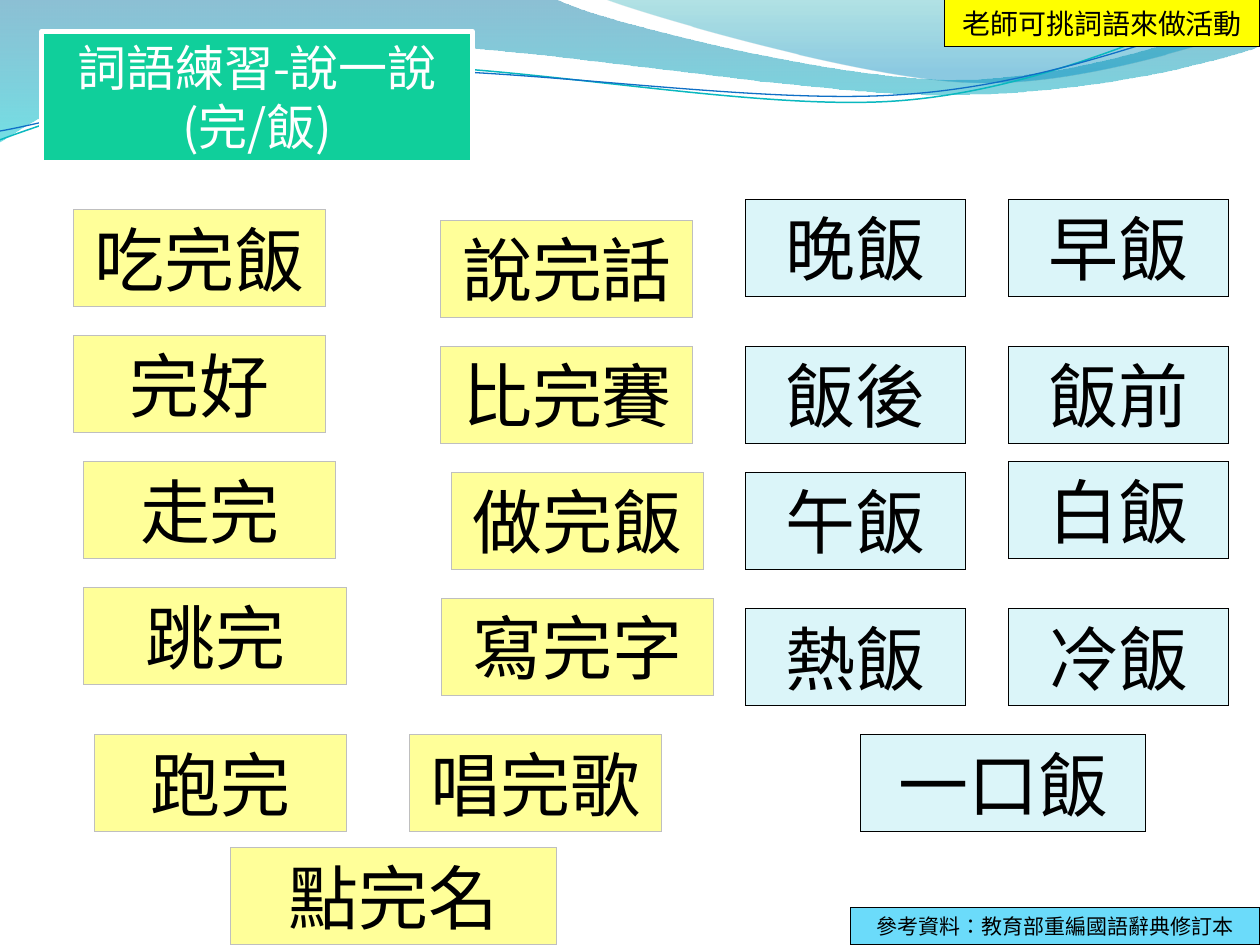
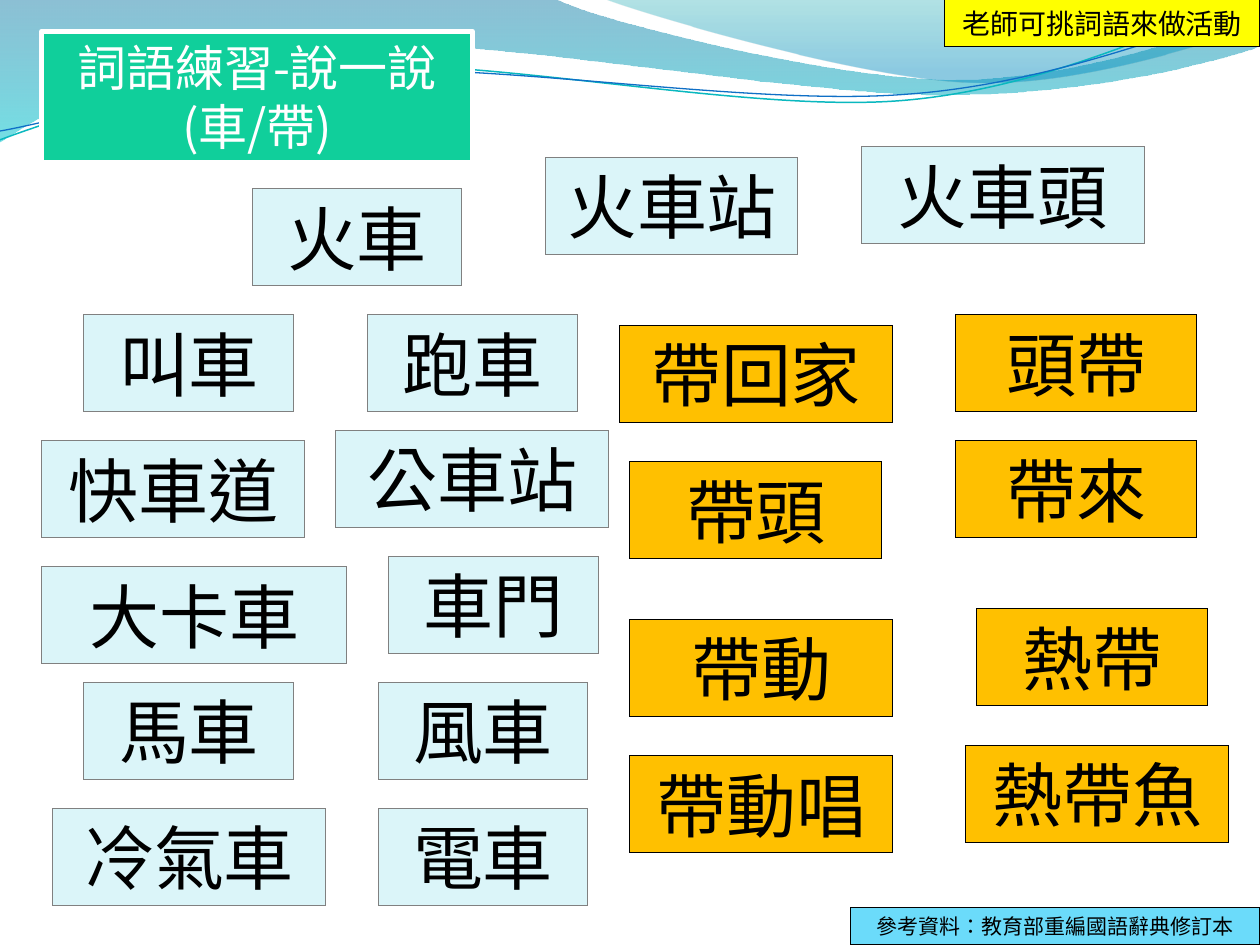
from math import cos, radians, sin
from lxml.etree import SubElement as Sub
from pptx import Presentation
from pptx.dml.color import RGBColor as RGB
from pptx.enum.shapes import MSO_SHAPE as Kind
from pptx.enum.text import MSO_ANCHOR as Anchor, MSO_AUTO_SIZE as Auto, PP_ALIGN as Align
from pptx.oxml.ns import qn
from pptx.util import Inches, Pt

FONT = "Noto Sans CJK SC"
UNIT = 12
TILT = 2.7
HUES = {
    "ink": "000000", "white": "FFFFFF", "green": "10CF9B",
    "yellow": "FFFF00", "sky": "6BDBFA", "cream": "FFFF99", "pale": "DBF5F9",
    "gold": "FFC000", "silver": "BFBFBF", "gray": "808080",
    "deep": "0074A1", "aqua": "00C6CF", "teal": "00A1A9", "blue": "008BBF",
    "cyan": "0AB8BF", "navy": "0F6FC6",
}

TITLE = "詞語練習-說一說"
TIP = "老師可挑詞語來做活動"
CREDIT = "參考資料：教育部重編國語辭典修訂本"

DECK = [
    ("(完/飯)", [
        ("cream", "silver", [
            ("吃完飯", 7, 20, 24), ("完好", 7, 32, 24), ("走完", 8, 44, 24),
            ("跳完", 8, 56, 25), ("跑完", 9, 70, 24),
            ("說完話", 42, 21, 24), ("比完賽", 42, 33, 24), ("做完飯", 43, 45, 24),
            ("寫完字", 42, 57, 26), ("唱完歌", 39, 70, 24), ("點完名", 22, 80.75, 31),
        ]),
        ("pale", "ink", [
            ("晚飯", 71, 19, 21), ("飯後", 71, 33, 21), ("午飯", 71, 45, 21),
            ("熱飯", 71, 58, 21),
            ("早飯", 96, 19, 21), ("飯前", 96, 33, 21), ("白飯", 96, 44, 21),
            ("冷飯", 96, 58, 21), ("一口飯", 82, 70, 27.1),
        ]),
    ]),
    ("(車/帶)", [
        ("pale", "gray", [
            ("火車", 24, 18, 20), ("火車站", 52, 15, 24), ("火車頭", 82, 14, 27),
            ("叫車", 8, 30, 20), ("快車道", 4, 42, 25), ("大卡車", 4, 54, 29),
            ("馬車", 8, 65, 20), ("冷氣車", 5, 77, 26),
            ("跑車", 35, 30, 20), ("公車站", 32, 41, 26), ("車門", 37, 53, 20),
            ("風車", 36, 65, 20), ("電車", 36, 77, 20),
        ]),
        ("gold", "ink", [
            ("帶回家", 59, 31, 26), ("帶頭", 60, 44, 24), ("帶動", 60, 59, 25),
            ("帶動唱", 60, 72, 25),
            ("頭帶", 91, 30, 23), ("帶來", 91, 42, 23), ("熱帶", 93, 58, 22),
            ("熱帶魚", 92, 71, 25),
        ]),
    ]),
]

WAVES = [
    ([(0, 0), (4.4, -0.01), (4.76, 0.17, 6.64, 0.63, 7.58, 0.63),
      (8.53, 0.63, 9.58, 0.26, 10, 0.09), (10.01, 0.36),
      (9.83, 0.44, 8.7, 0.76, 7.46, 0.75), (6.22, 0.75, 3.82, 0.28, 2.57, 0.34),
      (1.29, 0.36, 0.46, 0.83, -0.01, 1.13), (0, 0)],
     [("deep", 0, 45), ("aqua", 1, 55)]),
    ([(4.79, -0.01), (5.09, 0.11, 6.82, 0.62, 7.69, 0.65),
      (8.56, 0.69, 9.61, 0.32, 10, 0.21), (10, 0), (4.79, -0.01)],
     [("teal", 0, 30), ("blue", 0.8, 45)]),
]
THREADS = [
    ([(0, 1.11), (0.48, 0.93, 1.58, 0.57, 2.77, 0.52),
      (3.95, 0.47, 5.93, 0.89, 7.13, 0.8), (8.33, 0.71, 9.38, 0.15, 9.98, -0.02)],
     (4.99, 0.57), "cyan", 0.85),
    ([(0, 1.04), (0.47, 0.96, 1.64, 0.61, 2.83, 0.56),
      (4.03, 0.51, 5.97, 0.84, 7.17, 0.75), (8.36, 0.67, 9.41, 0.21, 10, 0.06)],
     (5, 0.59), "navy", 0.75),
]


def tint(name):
    return RGB.from_string(HUES[name])


def turn(leg, mid):
    a = radians(TILT)
    flat = []
    for x, y in zip(leg[::2], leg[1::2]):
        dx, dy = x - mid[0], y - mid[1]
        flat += [mid[0] + dx * cos(a) - dy * sin(a), mid[1] + dx * sin(a) + dy * cos(a)]
    return tuple(flat)


def draw(slide, legs, close):
    spots = [(Inches(x), Inches(y)) for leg in legs for x, y in zip(leg[::2], leg[1::2])]
    pen = slide.shapes.build_freeform(*spots[0], scale=1.0)
    pen.add_line_segments(spots[1:], close=close)
    shape = pen.convert_to_shape()
    shape.shadow.inherit = False
    track = next(shape._element.iter(qn("a:path")))
    lines = iter(track.findall(qn("a:lnTo")))
    for leg in legs[1:]:
        parts = [next(lines) for _ in range(len(leg) // 2)]
        if len(parts) == 3:
            curve = Sub(track, qn("a:cubicBezTo"))
            parts[0].addprevious(curve)
            for part in parts:
                curve.append(part[0])
                track.remove(part)
    return shape


def sea(slide):
    drawn = []
    for legs, stops in WAVES:
        wave = draw(slide, legs, True)
        wave.line.fill.background()
        wave.fill.gradient()
        wave.fill.gradient_angle = 270
        for stop, (hue, place, _) in zip(wave.fill.gradient_stops, stops):
            stop.color.rgb = tint(hue)
            stop.position = place
        for node, (_, _, alpha) in zip(wave._element.spPr.iter(qn("a:srgbClr")), stops):
            Sub(node, qn("a:alpha"), val=str(alpha * 1000))
        drawn.append(wave)
    for legs, mid, hue, width in THREADS:
        thread = draw(slide, [turn(leg, mid) for leg in legs], False)
        thread.rotation = 360 - TILT
        thread.fill.background()
        thread.line.color.rgb = tint(hue)
        thread.line.width = Pt(width)
        drawn.append(thread)
    return drawn


def share(show, drawn):
    tree = show.slide_master.shapes._spTree
    for spot, shape in enumerate(drawn):
        shape._element.nvSpPr.cNvPr.set("id", str(100 + spot))
        tree.insert(2 + spot, shape._element)


def card(slide, text, box, fill, edge="ink", size=40, ink="ink", width=None):
    shape = slide.shapes.add_shape(Kind.RECTANGLE, *map(Inches, box))
    shape._element.remove(shape._element.find(qn("p:style")))
    shape.shadow.inherit = False
    shape.fill.solid()
    shape.fill.fore_color.rgb = tint(fill)
    shape.line.color.rgb = tint(edge)
    if width:
        shape.line.width = Pt(width)
    frame = shape.text_frame
    frame.word_wrap = True
    frame.auto_size = Auto.SHAPE_TO_FIT_TEXT
    frame.vertical_anchor = Anchor.TOP
    para = frame.paragraphs[0]
    para.alignment = Align.CENTER
    run = para.add_run()
    run.text = text
    run.font.size = Pt(size)
    run.font.name = FONT
    run.font.color.rgb = tint(ink)
    props = run._r.get_or_add_rPr()
    props.set("lang", "zh-TW")
    Sub(props, qn("a:ea"), typeface=FONT)


def main():
    show = Presentation()
    show.slide_width, show.slide_height = Inches(10), Inches(7.5)
    slides = [show.slides.add_slide(show.slide_layouts[6]) for _ in DECK]
    share(show, sea(slides[0]))
    for slide, (topic, groups) in zip(slides, DECK):
        card(slide, TITLE + topic, (0.33, 0.25, 3.42, 1.04), "green", "white", 28, "white", 3)
        card(slide, TIP, (7.5, 0, 2.5, 0.37), "yellow", size=16)
        card(slide, CREDIT, (6.75, 7.2, 3.25, 0.3), "sky", size=12)
        for fill, edge, words in groups:
            for word, left, top, width in words:
                box = (left / UNIT, top / UNIT, width / UNIT, 0.77)
                card(slide, word, box, fill, edge)
    show.save("out.pptx")


if __name__ == "__main__":
    main()
